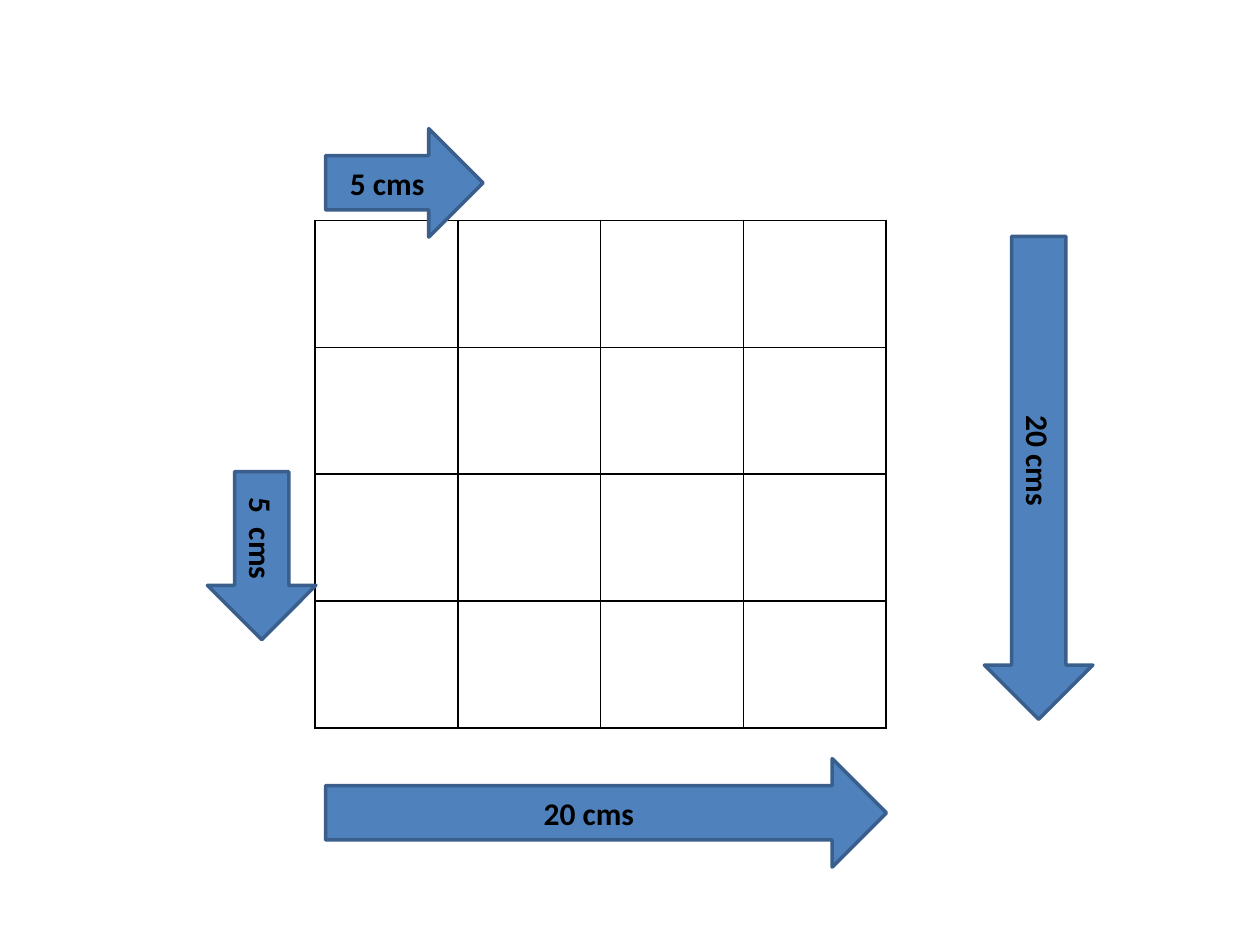
from lxml import etree
from pptx import Presentation
from pptx import util as u
from pptx.dml.color import RGBColor
from pptx.enum import shapes, text
from pptx.oxml import ns

COLORS = {"arrow": "4F81BD", "outline": "3A5F8C", "ink": "000000", "paper": "FFFFFF"}


def color(name):
    return RGBColor.from_string(COLORS[name])


def write_text(frame, content, size=18, font="Calibri", ink="ink", bold=True):
    frame.vertical_anchor = text.MSO_ANCHOR.MIDDLE
    paragraph = frame.paragraphs[0]
    paragraph.alignment = text.PP_ALIGN.CENTER
    run = paragraph.add_run()
    run.text = content
    run.font.size = u.Pt(size)
    run.font.name = font
    run.font.bold = bold
    run.font.color.rgb = color(ink)


def add_border(cell, width):
    properties = cell._tc.get_or_add_tcPr()
    for position, side in enumerate(("a:lnL", "a:lnR", "a:lnT", "a:lnB")):
        line = etree.Element(ns.qn(side), w=str(u.Pt(width)))
        fill = etree.SubElement(line, ns.qn("a:solidFill"))
        etree.SubElement(fill, ns.qn("a:srgbClr"), val=COLORS["ink"])
        properties.insert(position, line)


class SlideBuilder:
    arrow_thickness = 62
    outline_width = 2
    border_width = 1

    def __init__(self, slide):
        self.slide = slide

    def grid(self, left, top, count, cell_width, cell_height):
        frame = self.slide.shapes.add_table(
            count, count, u.Pt(left), u.Pt(top),
            u.Pt(count * cell_width), u.Pt(count * cell_height))
        table = frame.table
        table.first_row = False
        table.horz_banding = False
        for column in table.columns:
            column.width = u.Pt(cell_width)
        for row in table.rows:
            row.height = u.Pt(cell_height)
        for cell in table.iter_cells():
            cell.fill.solid()
            cell.fill.fore_color.rgb = color("paper")
            add_border(cell, self.border_width)

    def arrow(self, label, left, top, length, rotation=0):
        shape = self.slide.shapes.add_shape(
            shapes.MSO_SHAPE.RIGHT_ARROW, u.Pt(left), u.Pt(top),
            u.Pt(length), u.Pt(self.arrow_thickness))
        shape.rotation = rotation
        shape.shadow.inherit = False
        shape.fill.solid()
        shape.fill.fore_color.rgb = color("arrow")
        shape.line.color.rgb = color("outline")
        shape.line.width = u.Pt(self.outline_width)
        write_text(shape.text_frame, label)


def main():
    presentation = Presentation()
    presentation.slide_width = u.Pt(720)
    presentation.slide_height = u.Pt(540)
    builder = SlideBuilder(presentation.slides.add_slide(presentation.slide_layouts[6]))

    builder.grid(180, 126, count=4, cell_width=81.6, cell_height=72.5)
    builder.arrow("20 cms ", 186, 433.5, 320.5)
    builder.arrow("20 cms ", 455.5, 242, 276, rotation=90)
    builder.arrow("5  cms ", 101.5, 286.5, 96, rotation=90)
    builder.arrow("5 cms ", 186, 73.5, 90)

    presentation.save("out.pptx")


if __name__ == "__main__":
    main()
